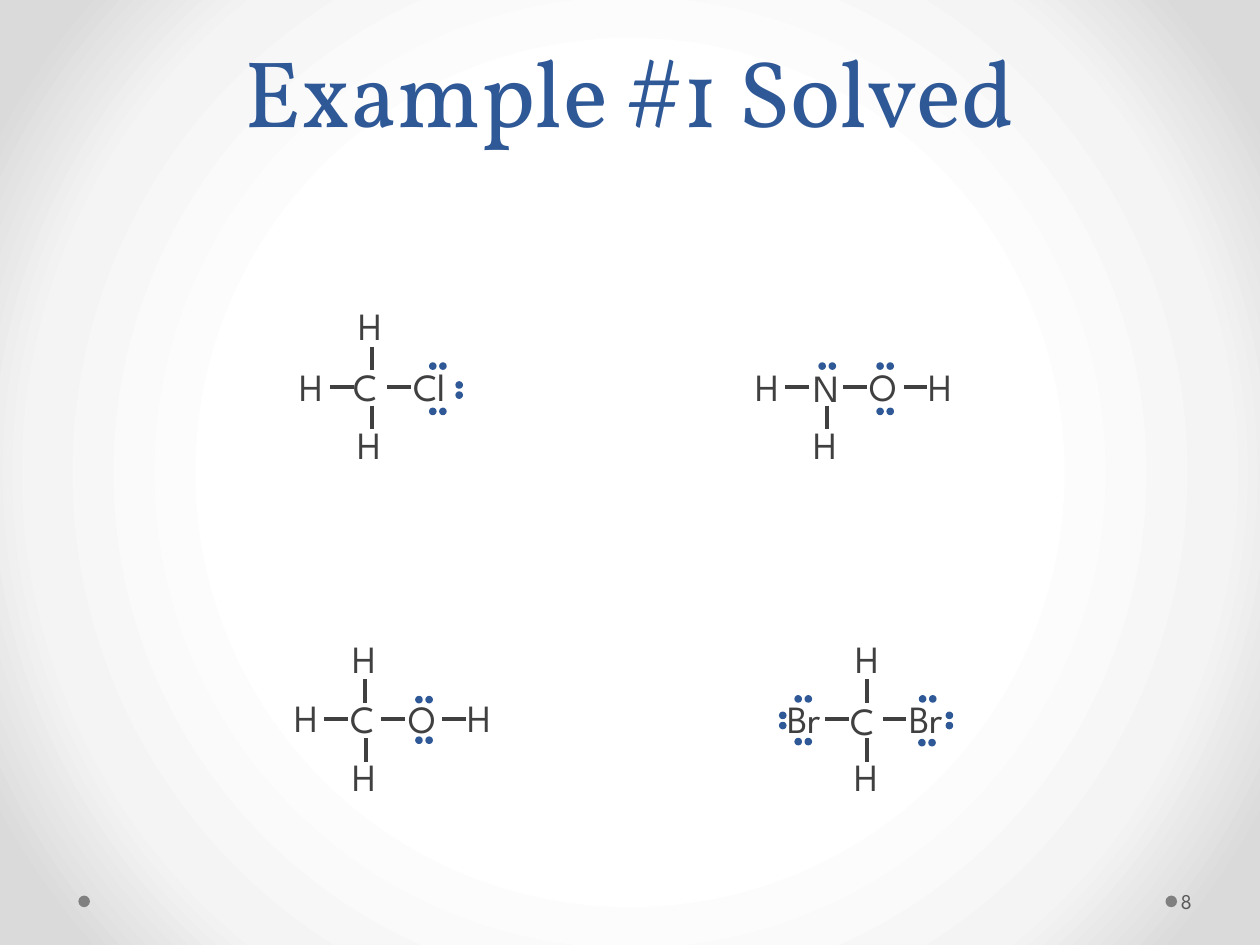
from lxml import etree
from pptx import Presentation
from pptx import util as u
from pptx.dml.color import RGBColor
from pptx.enum import shapes, text
from pptx.oxml import parse_xml
from pptx.oxml.ns import nsdecls, qn

BLUE = RGBColor(0x2F, 0x58, 0x97)
INK = RGBColor(0x40, 0x40, 0x40)
GREY = RGBColor(0x80, 0x80, 0x80)
NUMBER_GREY = RGBColor(0x59, 0x59, 0x59)

BODY_FONT = "League Spartan"
BOND_LENGTH = 13.5
DOT_SIZE = 3.6
DOT_STEP = 5.8
ATOM_HEIGHT = 33.8
ATOM_WIDTHS = {"H": 29.5, "C": 32.4, "N": 32.4, "O": 33.8, "Cl": 36.7, "Br": 34.6}

# Each molecule: atom boxes, then the left or upper end of each bond,
# then the first dot of each lone pair. "h" is horizontal, "v" vertical.
MOLECULES = [
    {   # CH3Cl
        "atoms": [("C", 195.1, 203.8), ("H", 198, 169.2), ("H", 197.3, 236.9),
                  ("H", 164.2, 203.8), ("Cl", 229, 203.8)],
        "bonds": [("h", 188.6, 221), ("h", 221.2, 221),
                  ("v", 212.4, 231.8), ("v", 212.4, 198)],
        "pairs": [("h", 245.5, 207.4), ("h", 245.5, 233.3), ("v", 260.6, 218.2)],
    },
    {   # NH2OH
        "atoms": [("N", 457.9, 204.5), ("H", 523.4, 203.8), ("H", 457.9, 236.9),
                  ("H", 424.8, 203.8), ("O", 489.6, 203.8)],
        "bonds": [("h", 448.6, 221), ("h", 481.7, 221), ("h", 516.4, 221),
                  ("v", 472.4, 231.8)],
        "pairs": [("h", 468, 207.4), ("h", 501.1, 207.4), ("h", 501.1, 233.3)],
    },
    {   # CH3OH
        "atoms": [("C", 193, 393.8), ("H", 259.9, 393.1), ("H", 194.4, 427),
                  ("H", 161.3, 393.1), ("O", 226.1, 393.8), ("H", 194.4, 359.3)],
        "bonds": [("h", 185.1, 411), ("h", 218, 410.6), ("h", 252.7, 410.6),
                  ("v", 208.9, 421.7), ("v", 208.6, 388.2)],
        "pairs": [("h", 237.6, 398), ("h", 237.6, 421.2)],
    },
    {   # CH2Br2
        "atoms": [("C", 478.8, 394.6), ("H", 481.7, 359.3), ("H", 481, 427),
                  ("Br", 442.8, 393.8), ("Br", 512.6, 393.8)],
        "bonds": [("h", 471.7, 411.1), ("h", 504.5, 411),
                  ("v", 495.4, 422), ("v", 495.4, 388.2)],
        "pairs": [("h", 454.3, 397.6), ("h", 454.3, 422), ("h", 525.4, 397.6),
                  ("h", 525, 422.6), ("v", 445.5, 407), ("v", 540.7, 407)],
    },
]


def add_text(parent, words, left, top, width, height, size, font, colour, wrap=True):
    box = parent.add_textbox(u.Pt(left), u.Pt(top), u.Pt(width), u.Pt(height))
    box.text_frame.word_wrap = wrap
    box.text_frame.text = words
    span = box.text_frame.paragraphs[0].runs[0]
    span.font.size = u.Pt(size)
    span.font.name = font
    span.font.color.rgb = colour
    return box


def add_dot(parent, left, top, size, colour):
    dot = parent.add_shape(shapes.MSO_SHAPE.OVAL, u.Pt(left), u.Pt(top), u.Pt(size), u.Pt(size))
    dot.shadow.inherit = False
    dot.fill.solid()
    dot.fill.fore_color.rgb = colour
    dot.line.fill.background()
    return dot


deck = Presentation()
deck.slide_width, deck.slide_height = u.Pt(720), u.Pt(540)
page = deck.slides.add_slide(deck.slide_layouts[6])

# Radial background
stops = "".join(
    f'<a:gs pos="{percent * 1000}"><a:srgbClr val="{colour}"/></a:gs>'
    for percent, colour in [(50, "FFFFFF"), (76, "F4F4F4"), (92, "DADADA")]
)
page.element.cSld.insert(0, parse_xml(
    f'<p:bg {nsdecls("p", "a")}><p:bgPr><a:gradFill rotWithShape="1"><a:gsLst>{stops}</a:gsLst>'
    '<a:path path="circle"><a:fillToRect l="50000" t="50000" r="50000" b="50000"/></a:path>'
    '</a:gradFill><a:effectLst/></p:bgPr></p:bg>'
))

# Footer dots
for left in (666, 44.8):
    add_dot(page.shapes, left, 511.8, 6.6, GREY)

# Title
title = add_text(page.shapes, "Example #1 Solved", 36, 0, 648, 87.1, 54, "Vollkorn", BLUE)
title.text_frame.vertical_anchor = text.MSO_ANCHOR.BOTTOM
para = title.text_frame.paragraphs[0]
para.alignment = text.PP_ALIGN.CENTER
para.line_spacing = u.Pt(58)

# Lewis structures, one group each
for molecule in MOLECULES:
    group = page.shapes.add_group_shape().shapes

    for symbol, left, top in molecule["atoms"]:
        atom = add_text(group, symbol, left, top, ATOM_WIDTHS[symbol], ATOM_HEIGHT,
                        22, BODY_FONT, INK, wrap=symbol in ("C", "N"))
        atom.text_frame.auto_size = text.MSO_AUTO_SIZE.SHAPE_TO_FIT_TEXT

    for direction, x, y in molecule["bonds"]:
        dx, dy = (BOND_LENGTH, 0) if direction == "h" else (0, BOND_LENGTH)
        bond = group.add_connector(shapes.MSO_CONNECTOR.STRAIGHT,
                                   u.Pt(x), u.Pt(y), u.Pt(x + dx), u.Pt(y + dy))
        bond.line.color.rgb = INK
        bond.line.width = u.Pt(2.25)
        etree.SubElement(bond.element.spPr, qn("a:effectLst"))

    for direction, x, y in molecule["pairs"]:
        dx, dy = (DOT_STEP, 0) if direction == "h" else (0, DOT_STEP)
        for step in range(2):
            electron = add_dot(group, x + step * dx, y + step * dy, DOT_SIZE, BLUE)
            electron.line.color.rgb = BLUE
            electron.line.width = u.Pt(0.75)

# Slide number
number = add_text(page.shapes, "8", 672.5, 500.4, 43.9, 28.8, 12, BODY_FONT, NUMBER_GREY)
number.text_frame.margin_left = u.Pt(2.2)
number.text_frame.margin_right = u.Pt(3.6)
number.text_frame.vertical_anchor = text.MSO_ANCHOR.MIDDLE

deck.save("out.pptx")
